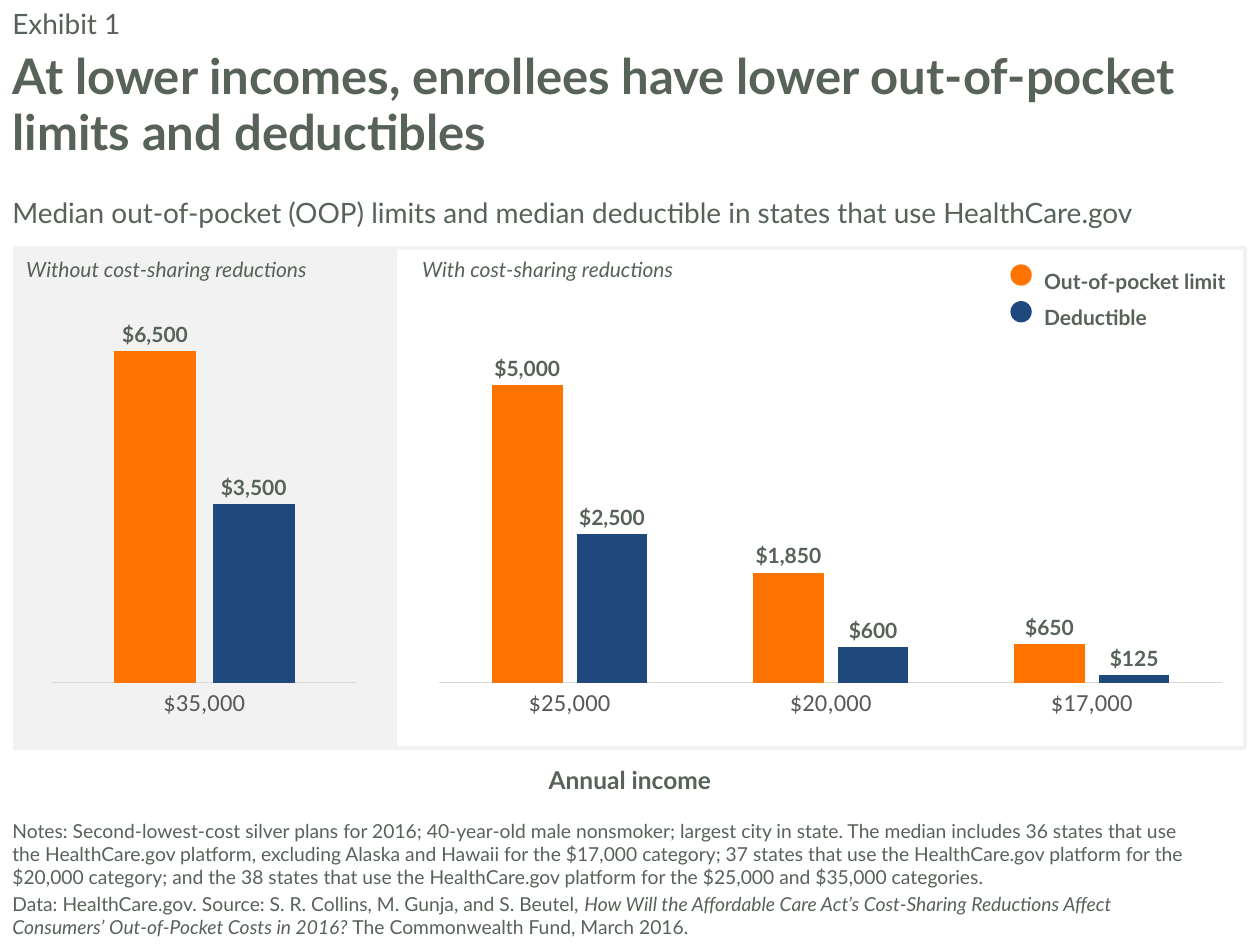
from dataclasses import dataclass

from lxml import etree
from pptx import Presentation
from pptx.chart.data import CategoryChartData
from pptx.dml.color import RGBColor
from pptx.enum.chart import XL_CHART_TYPE, XL_LABEL_POSITION, XL_TICK_MARK
from pptx.enum.shapes import MSO_SHAPE
from pptx.enum.text import MSO_ANCHOR, MSO_AUTO_SIZE, PP_ALIGN
from pptx.oxml.ns import qn
from pptx.util import Cm, Pt

COLUMNS = XL_CHART_TYPE.COLUMN_CLUSTERED
OUTSIDE_END = XL_LABEL_POSITION.OUTSIDE_END
NO_TICK = XL_TICK_MARK.NONE
RECTANGLE, OVAL = MSO_SHAPE.RECTANGLE, MSO_SHAPE.OVAL
TOP, BOTTOM = MSO_ANCHOR.TOP, MSO_ANCHOR.BOTTOM
LEFT, CENTER = PP_ALIGN.LEFT, PP_ALIGN.CENTER


@dataclass(frozen=True)
class Theme:
    font: str = "Lato"
    axis_font: str = "Calibri"
    ink: str = "576258"
    axis_ink: str = "595959"
    axis_line: str = "D9D9D9"
    panel: str = "F2F2F2"
    limit: str = "FF7300"
    deductible: str = "1F497D"
    title: int = 28
    lead: int = 16
    axis: int = 14
    label: int = 12
    notes: int = 11


THEME = Theme()
DOLLARS = '"$"#,##0'

TITLE = "At lower incomes, enrollees have lower out-of-pocket limits and deductibles"
LEADS = [
    ("Exhibit 1", (0, 0, 25.4, 0.84)),
    ("Median out-of-pocket (OOP) limits and median deductible in states that use HealthCare.gov",
     (0, 3.81, 24.49, 0.94)),
]
AXIS_TITLE = "Annual income"
NOTES = [
    [("Notes: Second-lowest-cost silver plans for 2016; 40-year-old male nonsmoker; largest city "
      "in state. The median includes 36 states that use the HealthCare.gov platform, excluding "
      "Alaska and Hawaii for the $17,000 category; 37 states that use the HealthCare.gov platform "
      "for the $20,000 category; and the 38 states that use the HealthCare.gov platform for the "
      "$25,000 and $35,000 categories.", False)],
    [("Data: HealthCare.gov. Source: S. R. Collins, M. Gunja, and S. Beutel, ", False),
     ("How Will the Affordable Care Act’s Cost-Sharing Reductions Affect Consumers’ "
      "Out-of-Pocket Costs in 2016?", True),
     (" The Commonwealth Fund, March 2016.", False)],
]
LEGEND = [("Out-of-pocket limit", THEME.limit), ("Deductible", THEME.deductible)]
PANELS = [
    {"caption": "Without cost-sharing reductions", "caption_left": 0.28,
     "left": 0.3, "width": 7.67, "filled": True,
     "chart_left": 0, "chart_width": 7.82, "plot": (0.135, 0.784), "top_value": 7000,
     "incomes": [35000], "limits": [6500], "deductibles": [3500]},
    {"caption": "With cost-sharing reductions", "caption_left": 8.26,
     "left": 7.95, "width": 17.15, "filled": False,
     "chart_left": 8.66, "chart_width": 16.08, "plot": (0.012, 0.982), "top_value": 6000,
     "incomes": [25000, 20000, 17000], "limits": [5000, 1850, 650],
     "deductibles": [2500, 600, 125]},
]

PANEL_TOP, PANEL_HEIGHT = 5, 10.08
CHART_TOP, CHART_HEIGHT = 5.92, 10.16
PLOT_TOP, PLOT_HEIGHT = 0.064, 0.708
LEGEND_LEFT, LEGEND_TOP, LEGEND_STEP = 20.8, 5.03, 0.74
DOT_LEFT, DOT_TOP, DOT_SIZE = 20.37, 5.33, 0.43


def rgb(value):
    return RGBColor.from_string(value)


def lengths(box):
    return [Cm(value) for value in box]


def style(font, size, color=THEME.ink, name=THEME.font, bold=False, italic=None):
    font.name, font.size, font.bold, font.italic = name, Pt(size), bold, italic
    font.color.rgb = rgb(color)


def add_text(page, text, box, size, align=LEFT, spacing=None, **look):
    frame = page.shapes.add_textbox(*lengths(box)).text_frame
    frame.word_wrap = True
    para = frame.paragraphs[0]
    para.text, para.alignment = text, align
    if spacing:
        para.line_spacing = spacing
    style(para.font, size, **look)


def add_title(page):
    title = page.shapes.title
    title.left, title.top, title.width, title.height = lengths((0, 0.84, 25.4, 2.64))
    frame = title.text_frame
    frame.text = TITLE
    frame.auto_size, frame.vertical_anchor = MSO_AUTO_SIZE.NONE, TOP
    para = frame.paragraphs[0]
    para.alignment, para.line_spacing = LEFT, Pt(32)
    style(para.font, THEME.title, bold=True)


def add_notes(page):
    frame = page.shapes.add_textbox(*lengths((0, 17.35, 24.49, 1.7))).text_frame
    frame.word_wrap, frame.vertical_anchor = True, BOTTOM
    for index, spans in enumerate(NOTES):
        para = frame.add_paragraph() if index else frame.paragraphs[0]
        if index:
            para.space_before = Pt(0.2 * THEME.notes)
        style(para.font, THEME.notes)
        for text, italic in spans:
            span = para.add_run()
            span.text = text
            style(span.font, THEME.notes, italic=italic)


def add_shape(page, kind, box, fill=None, line=None):
    shape = page.shapes.add_shape(kind, *lengths(box))
    shape.shadow.inherit = False
    if fill:
        shape.fill.solid()
        shape.fill.fore_color.rgb = rgb(fill)
    else:
        shape.fill.background()
    if line:
        shape.line.color.rgb, shape.line.width = rgb(line), Pt(2)
    else:
        shape.line.fill.background()


def place_plot(chart, left, width):
    area = chart.element.find(".//" + qn("c:plotArea"))
    for old in area.findall(qn("c:layout")):
        area.remove(old)
    layout = etree.Element(qn("c:layout"))
    manual = etree.SubElement(layout, qn("c:manualLayout"))
    settings = [("layoutTarget", "inner"), ("xMode", "edge"), ("yMode", "edge"),
                ("x", left), ("y", PLOT_TOP), ("w", width), ("h", PLOT_HEIGHT)]
    for tag, value in settings:
        etree.SubElement(manual, qn("c:" + tag)).set("val", str(value))
    area.insert(0, layout)


def add_columns(page, panel):
    data = CategoryChartData(number_format=DOLLARS)
    data.categories = panel["incomes"]
    data.categories.number_format = DOLLARS
    data.add_series("Series 1", panel["limits"])
    data.add_series("Series 2", panel["deductibles"])
    box = panel["chart_left"], CHART_TOP, panel["chart_width"], CHART_HEIGHT
    chart = page.shapes.add_chart(COLUMNS, *lengths(box), data).chart
    chart.has_legend = chart.has_title = False
    style(chart.font, THEME.label)
    place_plot(chart, *panel["plot"])

    plot = chart.plots[0]
    plot.vary_by_categories = False
    plot.gap_width, plot.overlap = 150, -20
    for series, (_, color) in zip(plot.series, LEGEND):
        series.format.fill.solid()
        series.format.fill.fore_color.rgb = rgb(color)
        labels = series.data_labels
        labels.show_value, labels.position = True, OUTSIDE_END
        labels.number_format, labels.number_format_is_linked = DOLLARS, False
        style(labels.font, THEME.label, bold=True)

    values = chart.value_axis
    values.minimum_scale, values.maximum_scale = 0, panel["top_value"]
    values.has_major_gridlines = values.visible = False
    incomes = chart.category_axis
    incomes.major_tick_mark = incomes.minor_tick_mark = NO_TICK
    incomes.format.line.color.rgb = rgb(THEME.axis_line)
    incomes.format.line.width = Pt(0.75)
    ticks = incomes.tick_labels
    ticks.number_format, ticks.number_format_is_linked = DOLLARS, False
    style(ticks.font, THEME.axis, THEME.axis_ink, THEME.axis_font)


def main():
    deck = Presentation()
    deck.slide_width, deck.slide_height = Cm(25.4), Cm(19.05)
    page = deck.slides.add_slide(deck.slide_layouts[5])
    add_title(page)
    for text, box in LEADS:
        add_text(page, text, box, THEME.lead)
    for panel in PANELS:
        add_shape(page, RECTANGLE, (panel["left"], PANEL_TOP, panel["width"], PANEL_HEIGHT),
                  THEME.panel if panel["filled"] else None, THEME.panel)
        add_columns(page, panel)
        add_text(page, panel["caption"], (panel["caption_left"], 5.05, 7.11, 0.76),
                 THEME.label, italic=True)
    for index, (name, color) in enumerate(LEGEND):
        drop = index * LEGEND_STEP
        add_text(page, name, (LEGEND_LEFT, LEGEND_TOP + drop, 4.32, 1.02), THEME.label,
                 spacing=1.5, bold=True)
        add_shape(page, OVAL, (DOT_LEFT, DOT_TOP + drop, DOT_SIZE, DOT_SIZE), color)
    add_text(page, AXIS_TITLE, (0, 15.29, 25.4, 0.86), THEME.axis, CENTER, bold=True)
    add_notes(page)
    deck.save("out.pptx")


if __name__ == "__main__":
    main()
